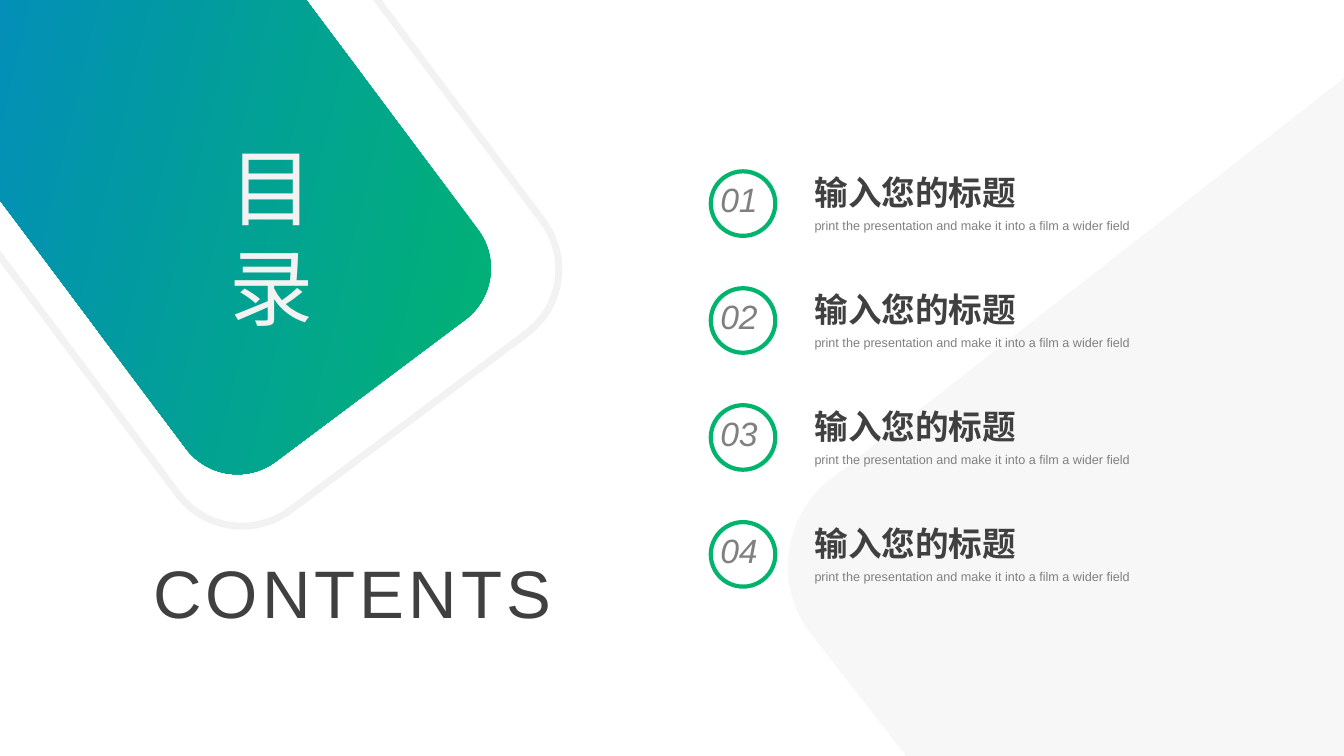
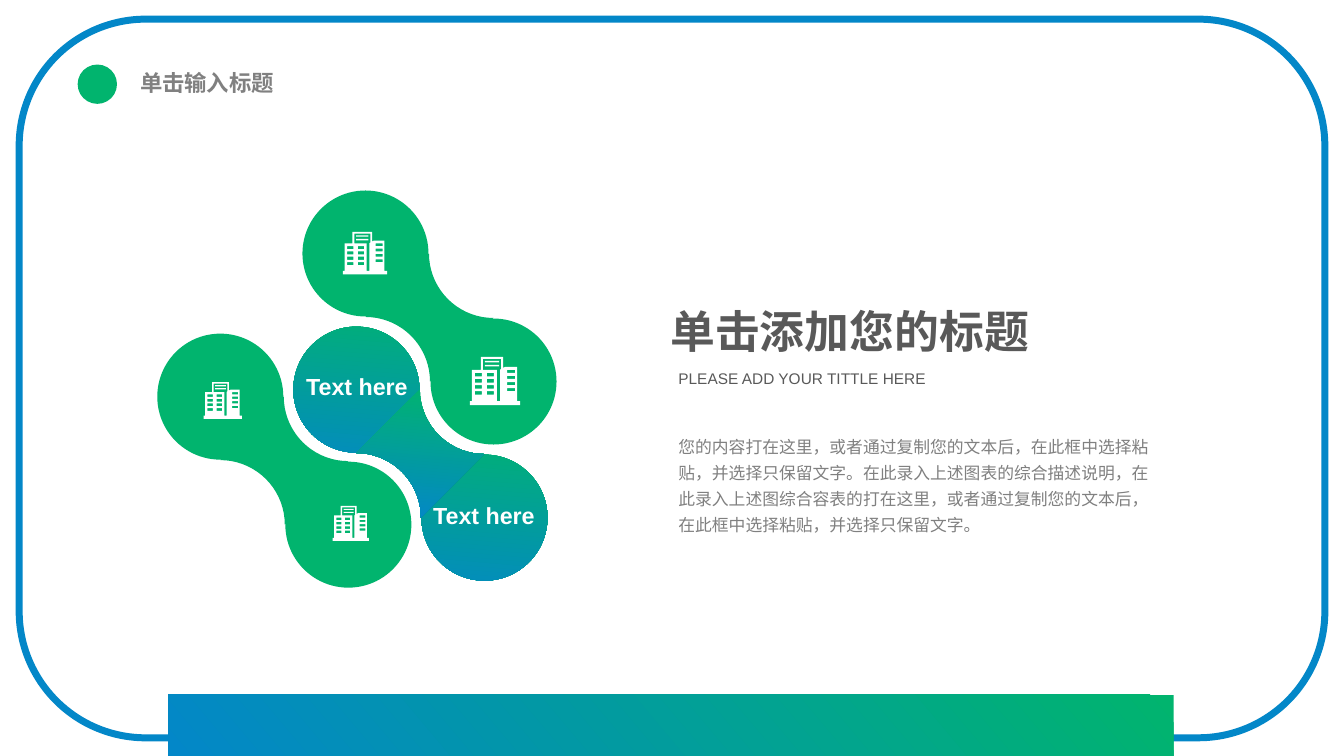
import math

import pptx
import pptx.dml.color
import pptx.enum.shapes
import pptx.enum.text
import pptx.oxml
import pptx.oxml.ns
import pptx.util

Inches, Pt = pptx.util.Inches, pptx.util.Pt
RGBColor = pptx.dml.color.RGBColor
MSO_SHAPE = pptx.enum.shapes.MSO_SHAPE
PP_ALIGN = pptx.enum.text.PP_ALIGN
MSO_ANCHOR = pptx.enum.text.MSO_ANCHOR
MSO_AUTO_SIZE = pptx.enum.text.MSO_AUTO_SIZE
qn = pptx.oxml.ns.qn


class Theme:
    font = "Arial"
    green, blue = "01B46E", "0387C8"
    white, pale = "FFFFFF", "F2F2F2"
    ink, slate, grey = "404040", "595959", "808080"
    gradient = "gradient"
    gradient_angle = 220
    corner = 0.176
    thick, ring = 5, 3
    giant, display, headline, title = 60, 48, 32, 24
    label, heading, body, subtitle, caption = 16.6, 16, 12, 11, 9


def paint(shape, fill=None, line=None, width=0, turn=0, angle=Theme.gradient_angle):
    """Set fill (colour, gradient or none), outline, rotation and corner radius."""
    shape.shadow.inherit = False
    shape.rotation = turn
    if shape.shape_type == pptx.enum.shapes.MSO_SHAPE_TYPE.AUTO_SHAPE and len(shape.adjustments):
        shape.adjustments[0] = Theme.corner
    if fill == Theme.gradient:
        shape.fill.gradient()
        shape.fill.gradient_angle = angle
        for stop, colour in zip(shape.fill.gradient_stops, (Theme.green, Theme.blue)):
            stop.color.rgb = RGBColor.from_string(colour)
    elif fill:
        shape.fill.solid()
        shape.fill.fore_color.rgb = RGBColor.from_string(fill)
    else:
        shape.fill.background()
    if line:
        shape.line.color.rgb = RGBColor.from_string(line)
        shape.line.width = Pt(width)
    else:
        shape.line.fill.background()
    return shape


def write(slide, box, text, size, colour, bold=False, italic=False, align=PP_ALIGN.LEFT,
          spacing=None, wrap=True, anchor=MSO_ANCHOR.TOP, grow=True):
    """Add a one-paragraph text box and return its run."""
    frame = slide.shapes.add_textbox(*map(Inches, box)).text_frame
    frame.word_wrap = wrap
    frame.vertical_anchor = anchor
    frame.auto_size = MSO_AUTO_SIZE.SHAPE_TO_FIT_TEXT if grow else MSO_AUTO_SIZE.NONE
    frame.text = text
    paragraph = frame.paragraphs[0]
    paragraph.alignment = align
    if spacing:
        paragraph.line_spacing = spacing
    run = paragraph.runs[0]
    run.font.name, run.font.size = Theme.font, Pt(size)
    run.font.bold, run.font.italic = bold, italic
    run.font.color.rgb = RGBColor.from_string(colour)
    return run


deck = pptx.Presentation()
deck.slide_width, deck.slide_height = Inches(13.33), Inches(7.5)
blank = deck.slide_layouts[6]

# Contents slide
contents = deck.slides.add_slide(blank)
panels = [
    ((8.35, 2.05, 8.84, 6.22), dict(fill=Theme.pale, turn=322)),
    ((-0.69, -0.12, 5.46, 3.62), dict(fill=Theme.gradient, turn=53.2)),
    ((-0.93, -0.57, 6.23, 4.52), dict(line=Theme.pale, width=Theme.thick, turn=53.2)),
]
for box, look in panels:
    panel = paint(contents.shapes.add_shape(MSO_SHAPE.ROUNDED_RECTANGLE, *map(Inches, box)), **look)
    if look.get("fill") == Theme.pale:
        tint = panel.fill._xPr.find(".//" + qn("a:srgbClr"))
        pptx.oxml.ns  # namespace helpers used for the transparency element
        tint.append(pptx.oxml.parse_xml(
            '<a:alpha xmlns:a="http://schemas.openxmlformats.org/drawingml/2006/main" val="55000"/>'))

for index in range(4):
    top = 1.7 + 1.16 * index
    ring = contents.shapes.add_shape(MSO_SHAPE.OVAL, *map(Inches, (7.05, top, 0.64, 0.64)))
    paint(ring, Theme.white, Theme.green, Theme.ring)
    write(contents, (7.98, top - 0.04, 2.22, 0.5), "输入您的标题", Theme.title, Theme.ink,
          bold=True, wrap=False)
    write(contents, (7.98, top + 0.41, 4.35, 0.25),
          "print the presentation and make it into a film a wider field",
          Theme.caption, Theme.grey)
    write(contents, (7.01, top + 0.03, 0.64, 0.5), f"{index + 1:02}", Theme.title, Theme.grey,
          italic=True, align=PP_ALIGN.CENTER)

write(contents, (2.18, 1.29, 0.91, 2.12), "目录", Theme.giant, Theme.pale, align=PP_ALIGN.CENTER)
contents_word = write(contents, (1.42, 5.36, 5.46, 1.01), "CONTENTS", Theme.display, Theme.ink,
                      anchor=MSO_ANCHOR.MIDDLE, grow=False)
contents_word._r.get_or_add_rPr().set("spc", "300")

# Diagram slide
diagram = deck.slides.add_slide(blank)
border = diagram.shapes.add_shape(MSO_SHAPE.ROUNDED_RECTANGLE,
                                  *map(Inches, (0.19, 0.19, 12.95, 7.13)))
paint(border, line=Theme.blue, width=Theme.thick)
heading_dot = diagram.shapes.add_shape(MSO_SHAPE.OVAL, *map(Inches, (0.77, 0.64, 0.39, 0.39)))
paint(heading_dot, Theme.green)
write(diagram, (1.29, 0.64, 2.11, 0.37), "单击输入标题", Theme.heading, Theme.grey,
      bold=True, align=PP_ALIGN.JUSTIFY)

# Each dumbbell is two discs on a diagonal, joined by a neck with two concave quarter arcs
disc, step, neck_radius = 1.25, 1.27, 0.64
quarter = [math.radians(degrees) for degrees in range(0, 91, 5)]
for left, top, fill in [(3, 1.89, Theme.green), (2.91, 3.24, Theme.gradient),
                        (1.56, 3.31, Theme.green)]:
    for shift in (0, step):
        end = diagram.shapes.add_shape(
            MSO_SHAPE.OVAL, *map(Inches, (left + shift, top + shift, disc, disc)))
        paint(end, fill, turn=315)
    x, y = left + disc / 2, top + disc / 2
    lower_arc = [(x + neck_radius * math.sin(a), y + step - neck_radius * math.cos(a))
                 for a in quarter]
    upper_arc = [(x + step - neck_radius * math.sin(a), y + neck_radius * math.cos(a))
                 for a in quarter]
    outline = [(Inches(px), Inches(py)) for px, py in lower_arc + upper_arc]
    neck = diagram.shapes.build_freeform(*outline[0])
    neck.add_line_segments(outline[1:])
    paint(neck.convert_to_shape(), fill, angle=Theme.gradient_angle + 45)

# Building icon, drawn on a grid half an inch wide
openings = [(x, 0.16 + 0.06 * row, 0.07, 0.035) for x in (0.05, 0.17) for row in range(4)]
openings += [(0.37, 0.13 + 0.06 * row, 0.08, 0.03) for row in range(4)]
openings += [(0.15, y, 0.14, 0.015) for y in (0.04, 0.08)]
building = [[(x, y), (x + w, y), (x + w, y + h), (x, y + h)] for x, y, w, h in openings]
building.append([(0.13, 0.02), (0.13, 0.13), (0.27, 0.13), (0.27, 0.44), (0.3, 0.44),
                 (0.3, 0.13), (0.31, 0.12), (0.31, 0.02)])
building.append([(0.11, 0), (0.33, 0), (0.33, 0.11), (0.35, 0.1), (0.47, 0.1), (0.47, 0.44),
                 (0.5, 0.44), (0.5, 0.48), (0, 0.48), (0, 0.44), (0.02, 0.44),
                 (0.02, 0.13), (0.11, 0.13)])
for left, top, width in [(4.66, 3.54, 0.5), (3.4, 2.3, 0.44), (3.3, 5.02, 0.36),
                         (2.02, 3.79, 0.38)]:
    scale = width / 0.5
    contours = [[(Inches(left + x * scale), Inches(top + y * scale)) for x, y in contour]
                for contour in building]
    icon = diagram.shapes.build_freeform(*contours[0][0])
    for contour in contours:
        if contour is not contours[0]:
            icon.move_to(*contour[0])
        icon.add_line_segments(contour[1:])
    paint(icon.convert_to_shape(), Theme.white)

for left, top in [(2.94, 3.66), (4.2, 4.94)]:
    write(diagram, (left, top, 1.2, 0.37), "Text here", Theme.label, Theme.white, bold=True,
          align=PP_ALIGN.CENTER, spacing=0.9, wrap=False, anchor=MSO_ANCHOR.MIDDLE, grow=False)

write(diagram, (6.55, 2.96, 6.78, 0.64), "单击添加您的标题", Theme.headline, Theme.slate, bold=True)
write(diagram, (6.63, 3.61, 4.81, 0.29), "PLEASE ADD YOUR TITTLE HERE", Theme.subtitle, Theme.slate)
footer_band = diagram.shapes.add_shape(MSO_SHAPE.RECTANGLE, *map(Inches, (1.67, 6.89, 9.97, 0.61)))
paint(footer_band, Theme.gradient)
write(diagram, (6.63, 4.22, 4.92, 1.13),
      "您的内容打在这里，或者通过复制您的文本后，在此框中选择粘贴，并选择只保留文字。"
      "在此录入上述图表的综合描述说明，在此录入上述图综合容表的打在这里，"
      "或者通过复制您的文本后，在此框中选择粘贴，并选择只保留文字。",
      Theme.body, Theme.grey, spacing=1.3)

deck.save("out.pptx")
